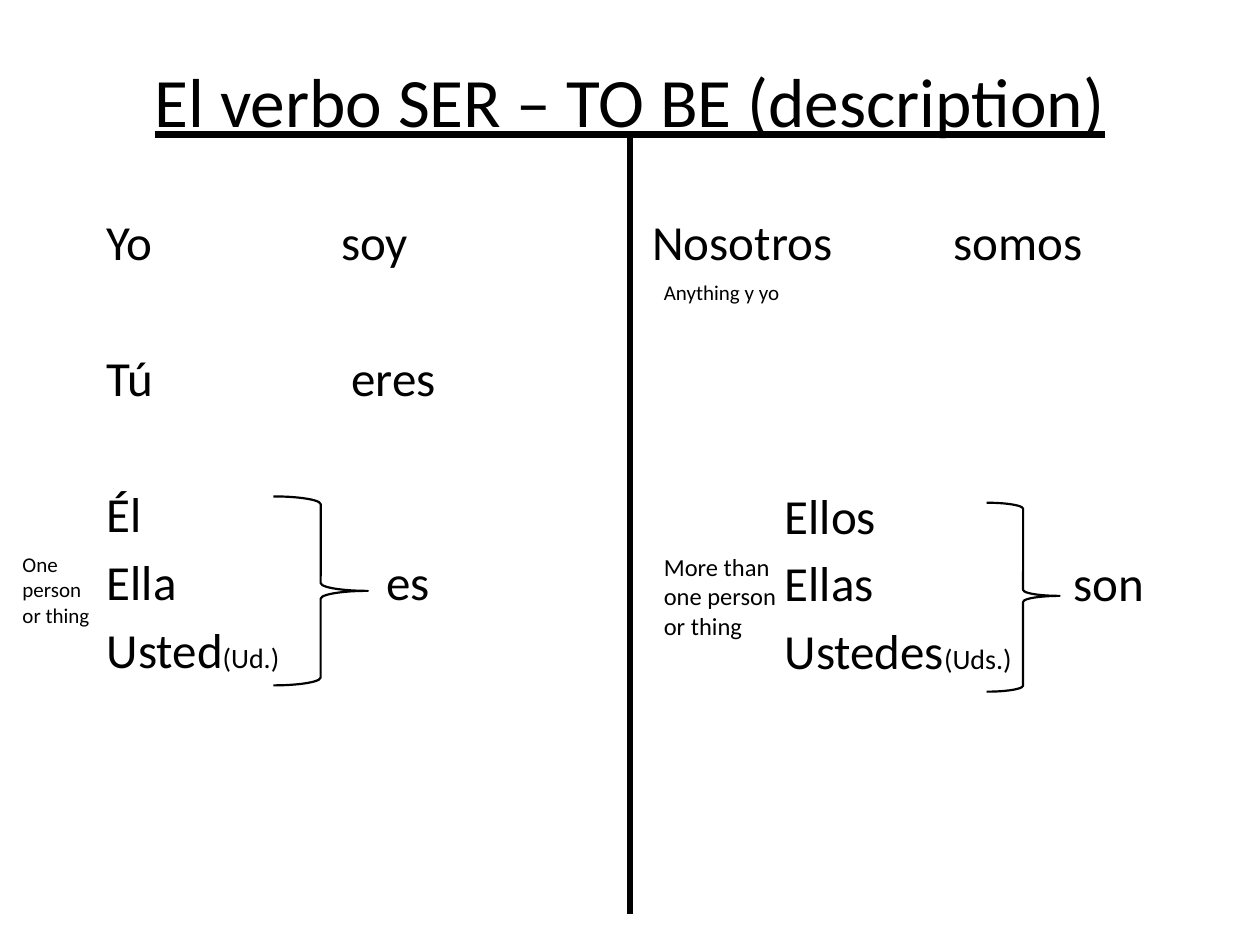
from lxml import etree
from pptx import Presentation
from pptx.dml.color import RGBColor
from pptx.enum.shapes import MSO_CONNECTOR, MSO_SHAPE
from pptx.enum.text import MSO_ANCHOR, PP_ALIGN
from pptx.oxml.ns import qn
from pptx.util import Inches, Pt

STRAIGHT = MSO_CONNECTOR.STRAIGHT
RIGHT_BRACE = MSO_SHAPE.RIGHT_BRACE
TOP, MIDDLE = MSO_ANCHOR.TOP, MSO_ANCHOR.MIDDLE
LEFT, CENTER = PP_ALIGN.LEFT, PP_ALIGN.CENTER

COLORS = {"ink": "000000", "paper": "FFFFFF"}
FONT = "Calibri"
TITLE = "El verbo SER – TO BE (description)"
TITLE_SIZE, VERB_SIZE, ABBREVIATION_SIZE = 39.6, 28, 16

# Each row: grid row, runs of (text, size), tab stops in inches
SINGULAR = [
    (0, [("Yo\tsoy", VERB_SIZE)], [1.86]),
    (2, [("Tú\teres", VERB_SIZE)], [1.94]),
    (4, [("Él", VERB_SIZE)], []),
    (5, [("Ella\tes", VERB_SIZE)], [2.22]),
    (6, [("Usted", VERB_SIZE), ("(Ud.)", ABBREVIATION_SIZE)], []),
]
PLURAL = [
    (0, [("Nosotros\tsomos", VERB_SIZE)], [2.39]),
    (4, [("\tEllos", VERB_SIZE)], [1.05]),
    (5, [("\tEllas\tson", VERB_SIZE)], [1.05, 3.34]),
    (6, [("\tUstedes", VERB_SIZE), ("(Uds.)", ABBREVIATION_SIZE)], [1.05]),
]
COLUMNS = [(0.75, SINGULAR), (5.08, PLURAL)]
COLUMN_TOP, COLUMN_WIDTH, COLUMN_HEIGHT = 1.08, 4.17, 4.5
FIRST_ROW_INSET = 0.6
ROW_GAP, ROW_PITCH = 5, 39.2  # points

NOTES = [
    ("One person or thing", 12, (0.08, 4.33, 0.75, 0.71)),
    ("More than one person or thing", 14, (5.17, 4.33, 1.25, 0.81)),
    ("Anything y yo", 12, (5.17, 2.17, 1.42, 0.3)),
]
BRACES = [
    ((2.17, 3.94, 0.75, 1.5), (0.083, 0.5)),
    ((7.83, 3.99, 0.58, 1.5), (0.083, 0.493)),
]


def color(name):
    return RGBColor.from_string(COLORS[name])


def add_text_frame(slide, place, anchor=TOP):
    box = slide.shapes.add_textbox(*map(Inches, place))
    frame = box.text_frame
    frame.word_wrap = True
    frame.vertical_anchor = anchor
    return frame


def add_runs(para, runs, underline=None):
    for text, size in runs:
        span = para.add_run()
        span.text = text
        span.font.name = FONT
        span.font.size = Pt(size)
        span.font.underline = underline
        span.font.color.rgb = color("ink")


def add_tab_stops(para, stops):
    tabs = etree.SubElement(para._p.get_or_add_pPr(), qn("a:tabLst"))
    for stop in stops:
        etree.SubElement(tabs, qn("a:tab"), pos=str(Inches(stop)), algn="l")


def add_column(slide, left, rows):
    """Stack the rows, turning each skipped grid row into paragraph spacing."""
    frame = add_text_frame(slide, (left, COLUMN_TOP, COLUMN_WIDTH, COLUMN_HEIGHT))
    frame.margin_top = Inches(FIRST_ROW_INSET)
    previous = None
    for row, runs, stops in rows:
        if previous is None:
            para = frame.paragraphs[0]
        else:
            para = frame.add_paragraph()
            para.space_before = Pt(ROW_GAP + (row - previous - 1) * ROW_PITCH)
        para.alignment = LEFT
        if stops:
            add_tab_stops(para, stops)
        add_runs(para, runs)
        previous = row


def add_divider(slide):
    line = slide.shapes.add_connector(
        STRAIGHT, Inches(5), Inches(COLUMN_TOP), Inches(5), Inches(7.25))
    line.line.color.rgb = color("ink")
    line.line.width = Pt(3.5)
    etree.SubElement(line._element.spPr, qn("a:effectLst"))


def add_brace(slide, place, adjustments):
    brace = slide.shapes.add_shape(RIGHT_BRACE, *map(Inches, place))
    for index, value in enumerate(adjustments):
        brace.adjustments[index] = value
    brace.shadow.inherit = False
    brace.fill.background()
    brace.line.color.rgb = color("ink")
    brace.line.width = Pt(1.25)


def main():
    deck = Presentation()
    deck.slide_width, deck.slide_height = Inches(10), Inches(7.5)
    slide = deck.slides.add_slide(deck.slide_layouts[6])
    slide.background.fill.solid()
    slide.background.fill.fore_color.rgb = color("paper")

    title = add_text_frame(slide, (0.75, 0.17, 8.5, 1.25), MIDDLE).paragraphs[0]
    title.alignment = CENTER
    add_runs(title, [(TITLE, TITLE_SIZE)], underline=True)

    for left, rows in COLUMNS:
        add_column(slide, left, rows)
    add_divider(slide)
    for text, size, place in NOTES:
        add_runs(add_text_frame(slide, place).paragraphs[0], [(text, size)])
    for place, adjustments in BRACES:
        add_brace(slide, place, adjustments)

    deck.save("out.pptx")


if __name__ == "__main__":
    main()
